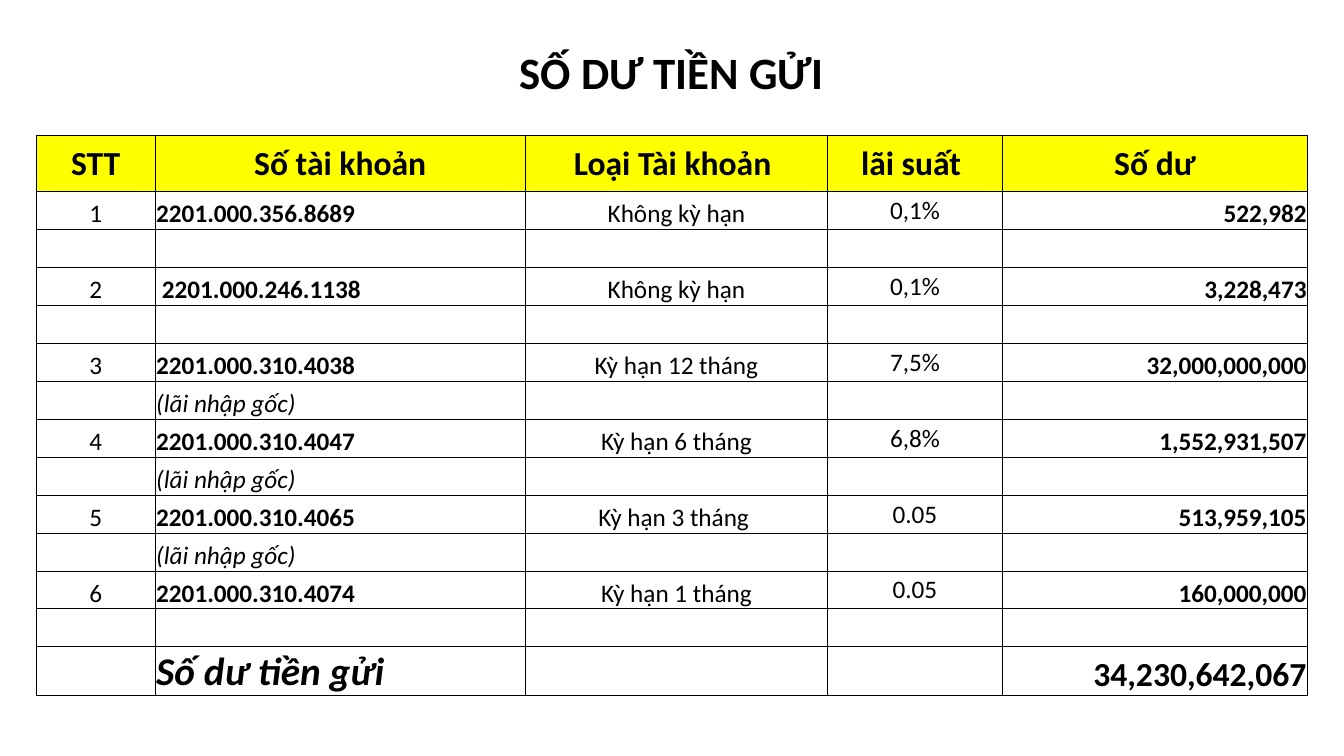
from dataclasses import dataclass, replace

from lxml.etree import SubElement
from pptx import Presentation
from pptx.dml.color import RGBColor
from pptx.enum.text import MSO_ANCHOR as Anchor, PP_ALIGN as Align
from pptx.oxml.ns import qn
from pptx.table import _Cell as Cell
from pptx.util import Inches, Pt

BLACK = RGBColor(0x00, 0x00, 0x00)
YELLOW = RGBColor(0xFF, 0xFF, 0x00)
FONT = "Calibri"

COL_WIDTHS = [1.18, 3.67, 3, 1.73, 3.03]
TITLE_H, GAP_H, HEADER_H, TOTAL_H = 1.01, 0.33, 0.56, 0.48
TABLE_LEFT, TOTAL_TOP = 0.36, 6.42
EDGES = ("L", "R", "T", "B")


@dataclass(frozen=True)
class Style:
    size: int = 18
    bold: bool = False
    italic: bool = False
    align: Align = Align.CENTER
    anchor: Anchor = Anchor.BOTTOM


@dataclass(frozen=True)
class Account:
    number: str
    kind: str
    rate: str
    balance: str
    note: str = ""


PLAIN = Style()
TITLE = Style(size=32, bold=True)
HEADER = Style(size=24, bold=True, anchor=Anchor.MIDDLE)
NUMBER = Style(bold=True, align=Align.LEFT)
NOTE = Style(italic=True, align=Align.LEFT)
RATE = Style(anchor=Anchor.MIDDLE)
BALANCE = Style(bold=True, align=Align.RIGHT)
TOTAL_LABEL = replace(NUMBER, size=28, italic=True)
TOTAL = replace(BALANCE, size=24)

HEADINGS = ["STT", "Số tài khoản", "Loại Tài khoản ", "lãi suất ", "Số dư"]
COMPOUND = "(lãi nhập gốc)"
ACCOUNTS = [
    Account("2201.000.356.8689", "Không kỳ hạn", "0,1%", "522,982"),
    Account(" 2201.000.246.1138", "Không kỳ hạn", "0,1%", "3,228,473"),
    Account("2201.000.310.4038", "Kỳ hạn 12 tháng", "7,5%", "32,000,000,000", COMPOUND),
    Account("2201.000.310.4047", "Kỳ hạn 6 tháng", "6,8%", "1,552,931,507", COMPOUND),
    Account("2201.000.310.4065", "Kỳ hạn 3 tháng ", "0.05", "513,959,105", COMPOUND),
    Account("2201.000.310.4074", "Kỳ hạn 1 tháng", "0.05", "160,000,000"),
]
HEADER_ROW, FIRST_ROW = 2, 3
TOTAL_ROW = FIRST_ROW + 2 * len(ACCOUNTS)


def set_borders(cell: Cell, visible: str) -> None:
    """Draw the named edges as thin black lines and clear the others."""
    tc_pr = cell._tc.get_or_add_tcPr()
    for i, edge in enumerate(EDGES):
        ln = SubElement(tc_pr, qn(f"a:ln{edge}"), w=str(Pt(0.5)))
        tc_pr.insert(i, ln)
        if edge in visible:
            fill = SubElement(ln, qn("a:solidFill"))
            SubElement(fill, qn("a:srgbClr"), val=str(BLACK))
        else:
            SubElement(ln, qn("a:noFill"))


def prepare_cell(cell: Cell, visible: str) -> None:
    margins = {"margin_left": 0.01, "margin_right": 0.01, "margin_top": 0.01, "margin_bottom": 0}
    for name, value in margins.items():
        setattr(cell, name, Inches(value))
    cell.fill.background()
    set_borders(cell, visible)


def write(cell: Cell, text: str, style: Style) -> None:
    cell.vertical_anchor = style.anchor
    p = cell.text_frame.paragraphs[0]
    p.alignment = style.align
    r = p.add_run()
    r.text = text
    r.font.color.rgb = BLACK
    fmt = {"name": FONT, "size": Pt(style.size), "bold": style.bold, "italic": style.italic}
    for name, value in fmt.items():
        setattr(r.font, name, value)


def main() -> None:
    prs = Presentation()
    prs.slide_width, prs.slide_height = Inches(13.33), Inches(7.5)
    slide = prs.slides.add_slide(prs.slide_layouts[6])

    top_h = [TITLE_H, GAP_H, HEADER_H]
    detail_rows = TOTAL_ROW - FIRST_ROW
    detail_h = (TOTAL_TOP - sum(top_h)) / detail_rows
    heights = top_h + [detail_h] * detail_rows + [TOTAL_H]

    frame = slide.shapes.add_table(
        len(heights), len(COL_WIDTHS), Inches(TABLE_LEFT), 0,
        Inches(sum(COL_WIDTHS)), Inches(sum(heights)))
    table = frame.table
    table.first_row = table.horz_banding = False
    for col, width in zip(table.columns, COL_WIDTHS):
        col.width = Inches(width)
    for i, (row, height) in enumerate(zip(table.rows, heights)):
        row.height = Inches(height)
        visible = "" if i == 0 else "B" if i == 1 else "LRTB"
        for cell in row.cells:
            prepare_cell(cell, visible)

    title = table.cell(0, 0)
    title.merge(table.cell(0, len(COL_WIDTHS) - 1))
    write(title, "SỐ DƯ TIỀN GỬI", TITLE)

    for c, heading in enumerate(HEADINGS):
        cell = table.cell(HEADER_ROW, c)
        cell.fill.solid()
        cell.fill.fore_color.rgb = YELLOW
        write(cell, heading, HEADER)

    styles = [PLAIN, NUMBER, PLAIN, RATE, BALANCE]
    for i, acc in enumerate(ACCOUNTS):
        row = FIRST_ROW + 2 * i
        values = [str(i + 1), acc.number, acc.kind, acc.rate, acc.balance]
        for c, (value, style) in enumerate(zip(values, styles)):
            write(table.cell(row, c), value, style)
        if acc.note:
            write(table.cell(row + 1, 1), acc.note, NOTE)

    write(table.cell(TOTAL_ROW, 1), "Số dư tiền gửi", TOTAL_LABEL)
    write(table.cell(TOTAL_ROW, 4), "34,230,642,067", TOTAL)
    prs.save("out.pptx")


if __name__ == "__main__":
    main()
